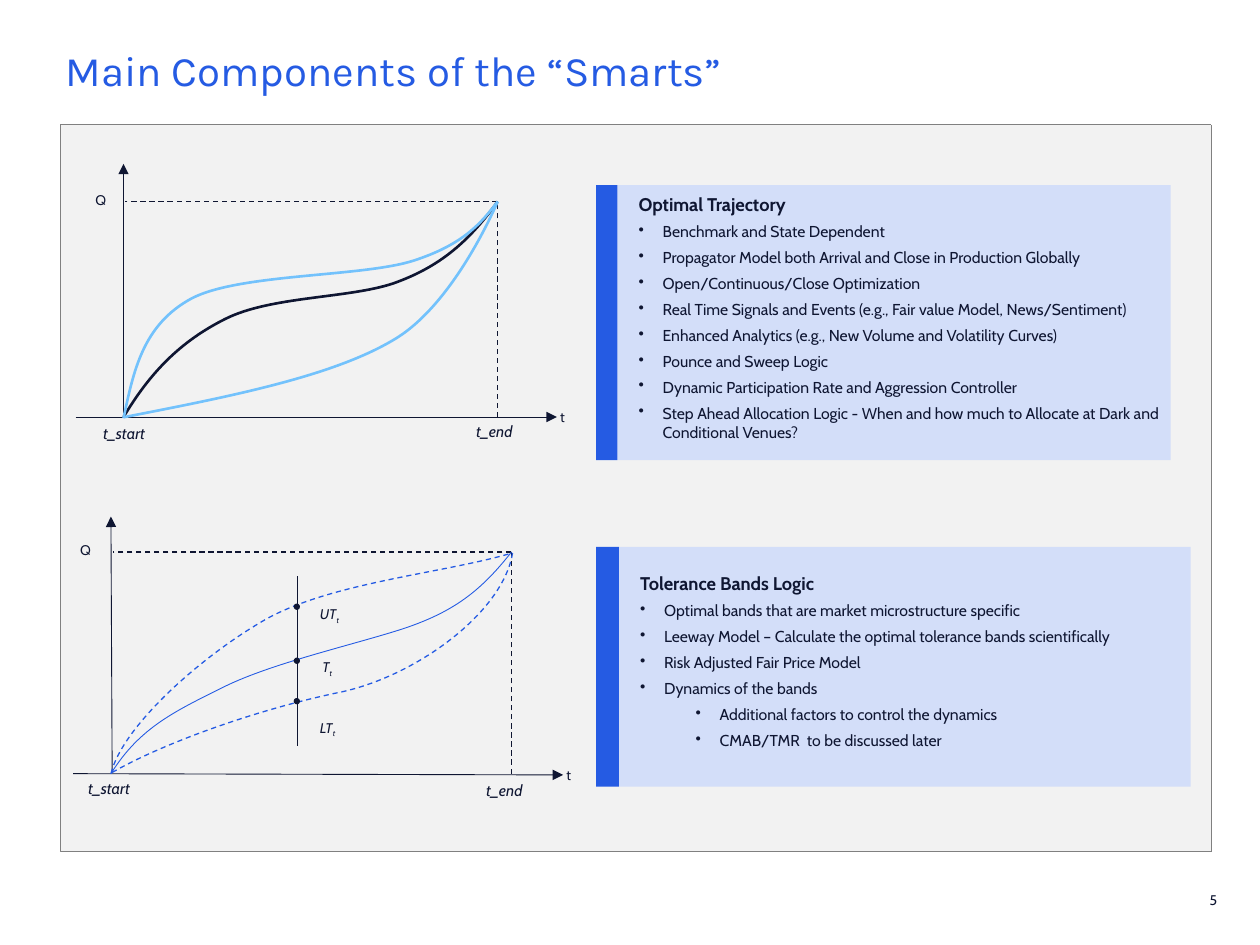
import pptx
import pptx.dml.color
import pptx.enum.dml
import pptx.enum.shapes
import pptx.enum.text
import pptx.oxml
import pptx.oxml.ns
import pptx.util

Pt = pptx.util.Pt
qn = pptx.oxml.ns.qn
Kind = pptx.enum.shapes.MSO_SHAPE
Dash = pptx.enum.dml.MSO_LINE
Align = pptx.enum.text.PP_ALIGN
Anchor = pptx.enum.text.MSO_ANCHOR


def tint(code):
    return pptx.dml.color.RGBColor.from_string(code)


def child(node, tag, **attrs):
    item = pptx.oxml.parse_xml(
        '<a:%s xmlns:a="http://schemas.openxmlformats.org/drawingml/2006/main"/>' % tag)
    for key, value in attrs.items():
        item.set(key, value)
    node.append(item)
    return item


class Board:
    ink, blue, sky, pale, gray = "0F1632", "255BE3", "73C2FC", "D3DEF9", "F2F2F2"
    font = "Cabin"

    def __init__(self, slide):
        self.slide = slide
        self.shapes = slide.shapes

    def pen(self, line, color, width, dash=None):
        line.color.rgb = tint(color)
        line.width = Pt(width)
        if dash:
            line.dash_style = dash

    def block(self, box, color, kind=Kind.RECTANGLE):
        shape = self.shapes.add_shape(kind, *map(Pt, box))
        shape.shadow.inherit = False
        shape.fill.solid()
        shape.fill.fore_color.rgb = tint(color)
        shape.line.fill.background()
        return shape

    def line(self, start, end, width=0.5, dash=None, arrow=False):
        link = self.shapes.add_connector(
            pptx.enum.shapes.MSO_CONNECTOR.STRAIGHT, *map(Pt, start + end))
        self.pen(link.line, self.ink, width, dash)
        if arrow:
            child(link.line._get_or_add_ln(), "tailEnd", type="triangle")
        child(link._element.spPr, "effectLst")

    def curve(self, points, color, width, dash=None):
        spots = [(Pt(x), Pt(y)) for x, y in points]
        pencil = self.shapes.build_freeform(*spots[0], scale=1.0)
        pencil.add_line_segments(spots[1:], close=False)
        shape = pencil.convert_to_shape()
        shape.shadow.inherit = False
        shape.fill.background()
        self.pen(shape.line, color, width, dash)
        route = shape._element.find(".//" + qn("a:path"))
        steps = list(route)[1:]
        for i in range(0, len(steps), 3):
            bend = child(route, "cubicBezTo")
            for step in steps[i:i + 3]:
                bend.append(step[0])
                route.remove(step)

    def frame(self, box, pads=(0, 0, 0, 0), wrap=True):
        text = self.shapes.add_textbox(*map(Pt, box)).text_frame
        text.word_wrap = wrap
        (text.margin_left, text.margin_top,
         text.margin_right, text.margin_bottom) = map(Pt, pads)
        return text

    def run(self, para, words, size, color=ink, font=font, bold=False, slant=False):
        run = para.add_run()
        run.text = words
        run.font.size = Pt(size)
        run.font.name = font
        run.font.bold = bold
        run.font.italic = slant
        run.font.color.rgb = tint(color)
        return run

    def mark(self, spot, words, size=9, sub=None):
        text = self.frame(spot + (61.2, 18), (7.2, 3.6, 7.2, 3.6))
        para = text.paragraphs[0]
        self.run(para, words, size, slant=True)
        if sub:
            low = self.run(para, sub, size, slant=True)
            low.font._element.set("baseline", "-25000")

    def sign(self, spot, words):
        text = self.frame(spot + (12.6, 16.2), (5.5, 3.6, 0, 3.6), False)
        self.run(text.paragraphs[0], words, 8)

    def axes(self, rise, base, corner, foot):
        self.line(*rise, arrow=True)
        self.line(*base, arrow=True)
        self.line(corner, (rise[0][0] + 0.7, corner[1]), 0.75, Dash.DASH)
        self.line((corner[0], foot), corner, 0.75, Dash.DASH)

    def panel(self, box, bar, inner, title, items):
        left, top, width, high = box
        self.block((left + bar, top, width - bar, high), self.pale)
        self.block((left, top, bar, high), self.blue)
        text = self.frame(inner)
        head = text.paragraphs[0]
        head.space_after = Pt(2)
        self.run(head, title, 10.5, bold=True)
        for level, words in items:
            para = text.add_paragraph()
            para.level = level
            para.space_before = para.space_after = Pt(2)
            props = para._p.get_or_add_pPr()
            props.set("marL", str(Pt((13.7, 45.4)[level])))
            props.set("indent", str(Pt(-13.7)))
            child(props, "buChar", char="•")
            self.run(para, words, 9)


def main():
    deck = pptx.Presentation()
    deck.slide_width, deck.slide_height = Pt(720), Pt(540)
    board = Board(deck.slides.add_slide(deck.slide_layouts[6]))

    back = board.block((34.6, 71.3, 657.4, 415.4), board.gray)
    board.pen(back.line, "808080", 0.25, Dash.ROUND_DOT)
    title = board.frame((37.4, 28.8, 685.4, 38.2)).paragraphs[0]
    title.line_spacing = 0.9
    board.run(title, "Main Components of the “Smarts”", 24, board.blue, "Karla")
    page = board.frame((679.7, 499.7, 15.8, 28.8))
    page.vertical_anchor = Anchor.MIDDLE
    page.paragraphs[0].alignment = Align.RIGHT
    board.run(page.paragraphs[0], "5", 8)

    board.axes(((70.6, 238.3), (70.6, 93.6)), ((43.2, 238.3), (318.2, 238.3)),
               (284.4, 115.2), 238.3)
    for color, points in (
        (board.ink, [(70.6, 238.3), (85.7, 213.1), (103, 195.1), (128.9, 182.2),
                     (154.8, 169.2), (198.7, 170.6), (224.6, 162),
                     (251.3, 152.6), (267.8, 138.2), (284.4, 115.2)]),
        (board.sky, [(71.3, 238.3), (130.3, 226.8), (189.4, 215.3), (224.6, 194.4),
                     (259.9, 174.2), (284.4, 115.2), (284.4, 115.2)]),
        (board.sky, [(70.6, 239), (76.3, 212.4), (81.4, 185.8), (109.4, 170.6),
                     (136.8, 156.2), (206.6, 158.4), (236.2, 149),
                     (265, 139.7), (275, 127.4), (284.4, 115.2)]),
    ):
        board.curve(points, color, 1.5)

    board.axes(((64.1, 441.4), (63.4, 295.2)), ((41.8, 442.1), (321.8, 442.8)),
               (292.3, 315.4), 442.1)
    for width, dash, points in (
        (0.5, None, [(63.4, 442.1), (79.9, 415.4), (100.8, 406.1), (128.2, 392.4),
                     (156.2, 378.7), (201.6, 368.6), (230.4, 359.3),
                     (258.5, 349.9), (274.3, 338.4), (292.3, 315.4)]),
        (0.75, Dash.DASH, [(63.4, 442.1), (69.8, 415.4), (114.5, 375.1), (152.6, 353.5),
                           (190.8, 332.6), (253.4, 327.6), (292.3, 316.1)]),
        (0.75, Dash.DASH, [(64.1, 441.4), (94.3, 424.1), (147.6, 405.4), (192.2, 396),
                           (236.9, 387.4), (288, 349.9), (293, 315.4)]),
    ):
        board.curve(points, board.blue, width, dash)
    board.line((169.9, 426.2), (169.9, 329))
    for dot, spot, name in ((344.9, (175.7, 342.7), "UT"),
                            (375.8, (177.1, 373), "T"),
                            (398.9, (175.7, 407.5), "LT")):
        board.block((167.8, dot, 3.6, 3.6), board.ink, Kind.OVAL)
        board.mark(spot, name, 8, "t")

    for spot, name in (((49, 105.8), "Q"), ((314.6, 229.7), "t"),
                       ((40.3, 306), "Q"), ((318.2, 434.2), "t")):
        board.sign(spot, name)
    for spot, name in (((51.8, 238.3), "t_start"), ((265, 237.6), "t_end"),
                       ((43.2, 441.4), "t_start"), ((270.7, 442.8), "t_end")):
        board.mark(spot, name)

    board.panel((340.6, 105.8, 328.3, 157.2), 12.2, (365, 110.2, 302.4, 146.9),
                "Optimal Trajectory", [
        (0, "Benchmark and State Dependent"),
        (0, "Propagator Model both Arrival and Close in Production Globally"),
        (0, "Open/Continuous/Close Optimization"),
        (0, "Real Time Signals and Events (e.g., Fair value Model, News/Sentiment)"),
        (0, "Enhanced Analytics (e.g., New Volume and Volatility Curves)"),
        (0, "Pounce and Sweep Logic"),
        (0, "Dynamic Participation Rate and Aggression Controller"),
        (0, "Step Ahead Allocation Logic - When and how much to Allocate "
            "at Dark and Conditional Venues?"),
    ])
    board.panel((340.6, 312.5, 339.8, 137), 13, (365.8, 326.9, 293, 110.9),
                "Tolerance Bands Logic", [
        (0, "Optimal bands that are market microstructure specific"),
        (0, "Leeway Model – Calculate the optimal tolerance bands scientifically"),
        (0, "Risk Adjusted Fair Price Model"),
        (0, "Dynamics of the bands"),
        (1, "Additional factors to control the dynamics"),
        (1, "CMAB/TMR  to be discussed later"),
    ])
    deck.save("out.pptx")


if __name__ == "__main__":
    main()
